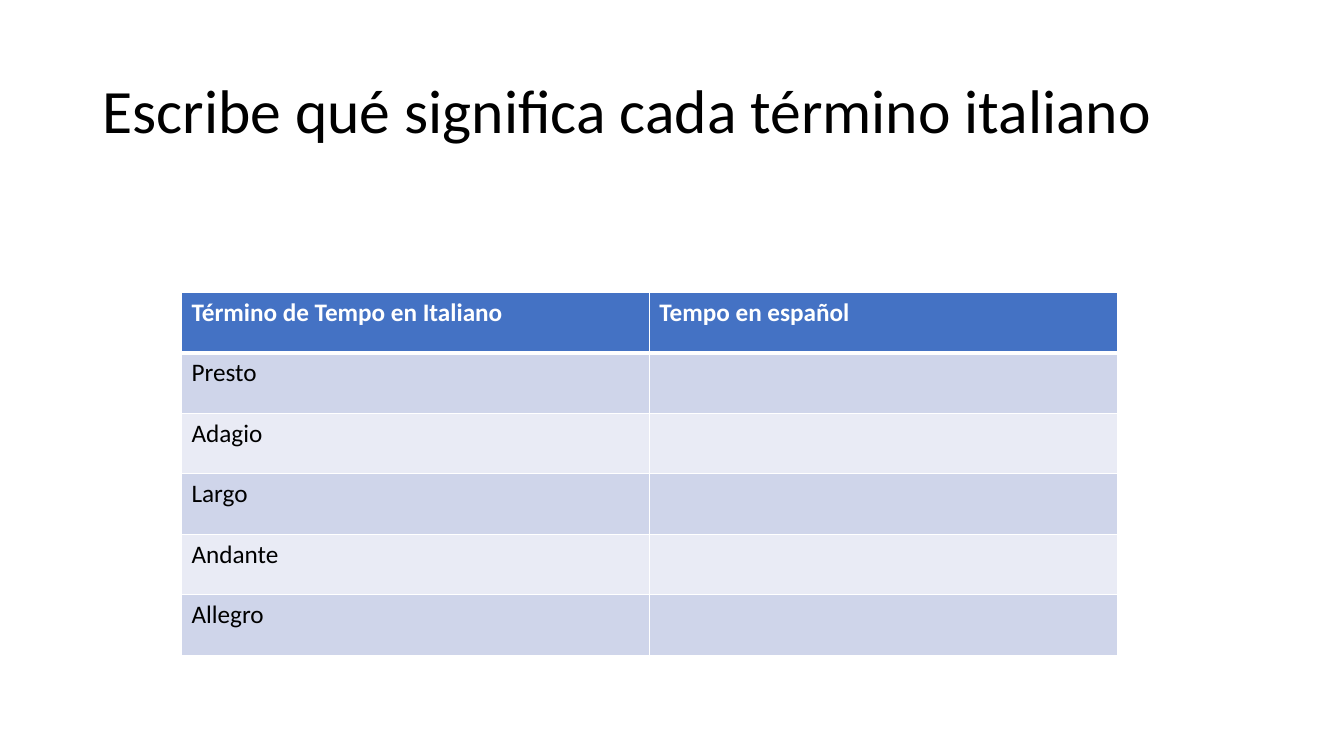
from lxml import etree
from pptx import Presentation
from pptx.dml.color import RGBColor
from pptx.enum.text import MSO_ANCHOR
from pptx.oxml.ns import qn
from pptx.util import Pt

PX = 9144  # 100 px to the inch
MIDDLE = MSO_ANCHOR.MIDDLE

FONT = "Calibri"
BLACK = RGBColor(0x00, 0x00, 0x00)
WHITE = RGBColor(0xFF, 0xFF, 0xFF)
HEADER_BLUE = RGBColor(0x44, 0x72, 0xC4)
BAND_DARK = RGBColor(0xCF, 0xD5, 0xEA)
BAND_LIGHT = RGBColor(0xE9, 0xEB, 0xF5)

HEADINGS = ["Término de Tempo en Italiano", "Tempo en español"]
TERMS = ["Presto", "Adagio", "Largo", "Andante", "Allegro"]
COLUMN_WIDTH, ROW_HEIGHT = 464, 60


def px(length):
    return length * PX


def set_text(frame, text, size, color, bold=False):
    frame.text = text
    for run in frame.paragraphs[0].runs:
        run.font.name = FONT
        run.font.size = Pt(size)
        run.font.bold = bold
        run.font.color.rgb = color


def add_title(slide, text):
    title = slide.shapes.add_textbox(px(92), px(40), px(1150), px(145))
    frame = title.text_frame
    frame.word_wrap = True
    frame.vertical_anchor = MIDDLE
    set_text(frame, text, 44, BLACK)
    frame.paragraphs[0].line_spacing = 0.9


def set_border(cell, side, points):
    properties = cell._tc.get_or_add_tcPr()
    line = etree.SubElement(properties, qn(f"a:{side}"), w=str(Pt(points)))
    fill = etree.SubElement(line, qn("a:solidFill"))
    etree.SubElement(fill, qn("a:srgbClr"), val=str(WHITE))


def style_cell(cell, fill, top, bottom):
    # Borders come before the fill in the cell properties
    for side, points in (("lnL", 1), ("lnR", 1), ("lnT", top), ("lnB", bottom)):
        set_border(cell, side, points)
    cell.fill.solid()
    cell.fill.fore_color.rgb = fill


def add_tempo_table(slide):
    rows = [HEADINGS] + [[term, ""] for term in TERMS]
    table = slide.shapes.add_table(
        len(rows), len(HEADINGS), px(180), px(290),
        px(COLUMN_WIDTH * len(HEADINGS)), px(ROW_HEIGHT * len(rows))).table
    for column in table.columns:
        column.width = px(COLUMN_WIDTH)

    for row, texts in enumerate(rows):
        table.rows[row].height = px(ROW_HEIGHT)
        is_header = row == 0
        band = BAND_DARK if row % 2 else BAND_LIGHT
        for column, text in enumerate(texts):
            cell = table.cell(row, column)
            style_cell(cell, HEADER_BLUE if is_header else band,
                       top=3 if row == 1 else 1, bottom=3 if is_header else 1)
            set_text(cell.text_frame, text, 18,
                     WHITE if is_header else BLACK, is_header)


def main():
    presentation = Presentation()
    presentation.slide_width = px(1333)
    presentation.slide_height = px(750)
    slide = presentation.slides.add_slide(presentation.slide_layouts[6])

    # Heading
    add_title(slide, "Escribe qué significa cada término italiano")
    # Exercise table
    add_tempo_table(slide)

    presentation.save("out.pptx")


if __name__ == "__main__":
    main()
